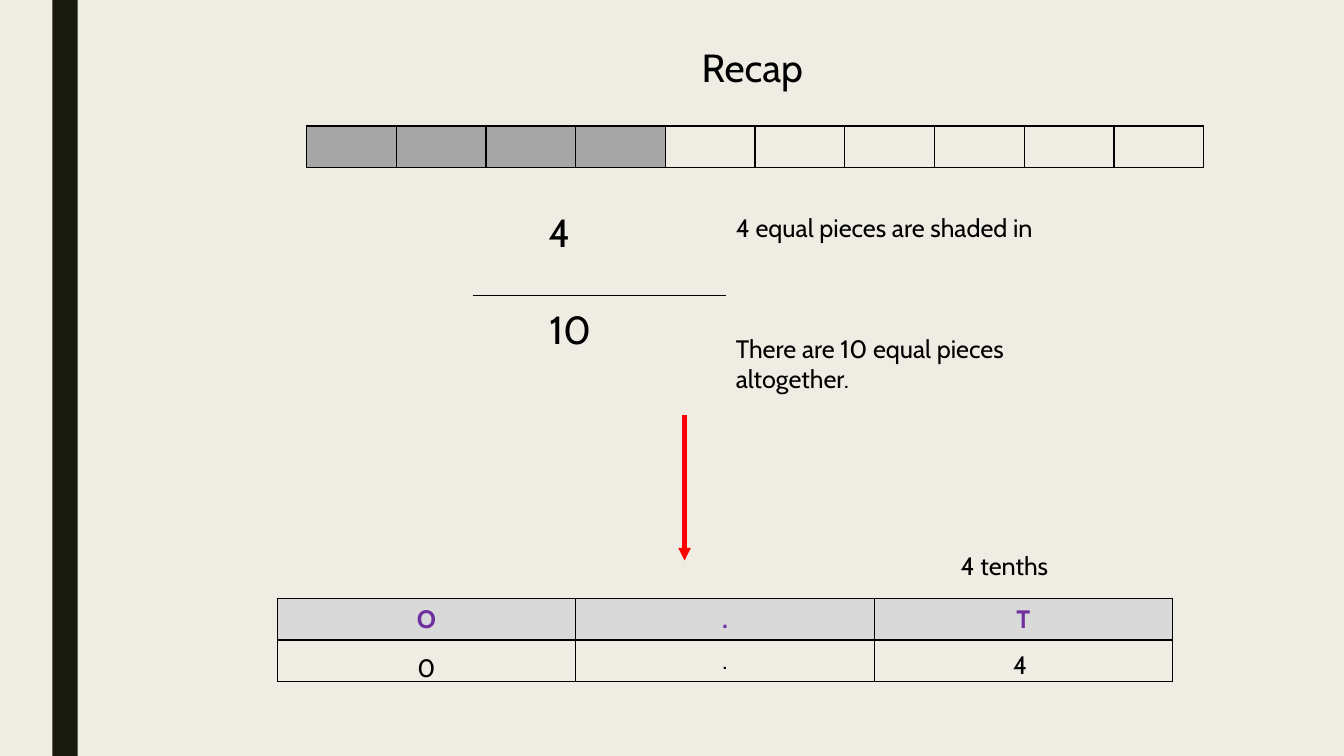
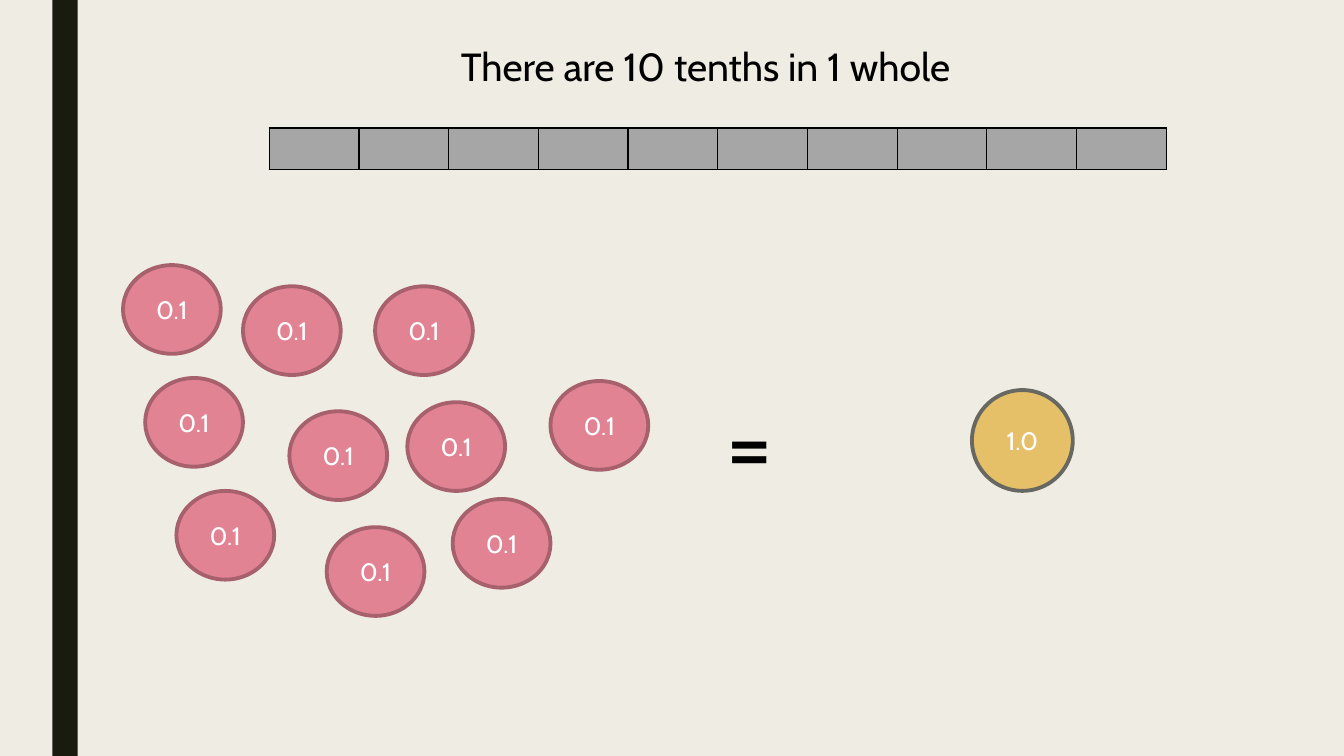
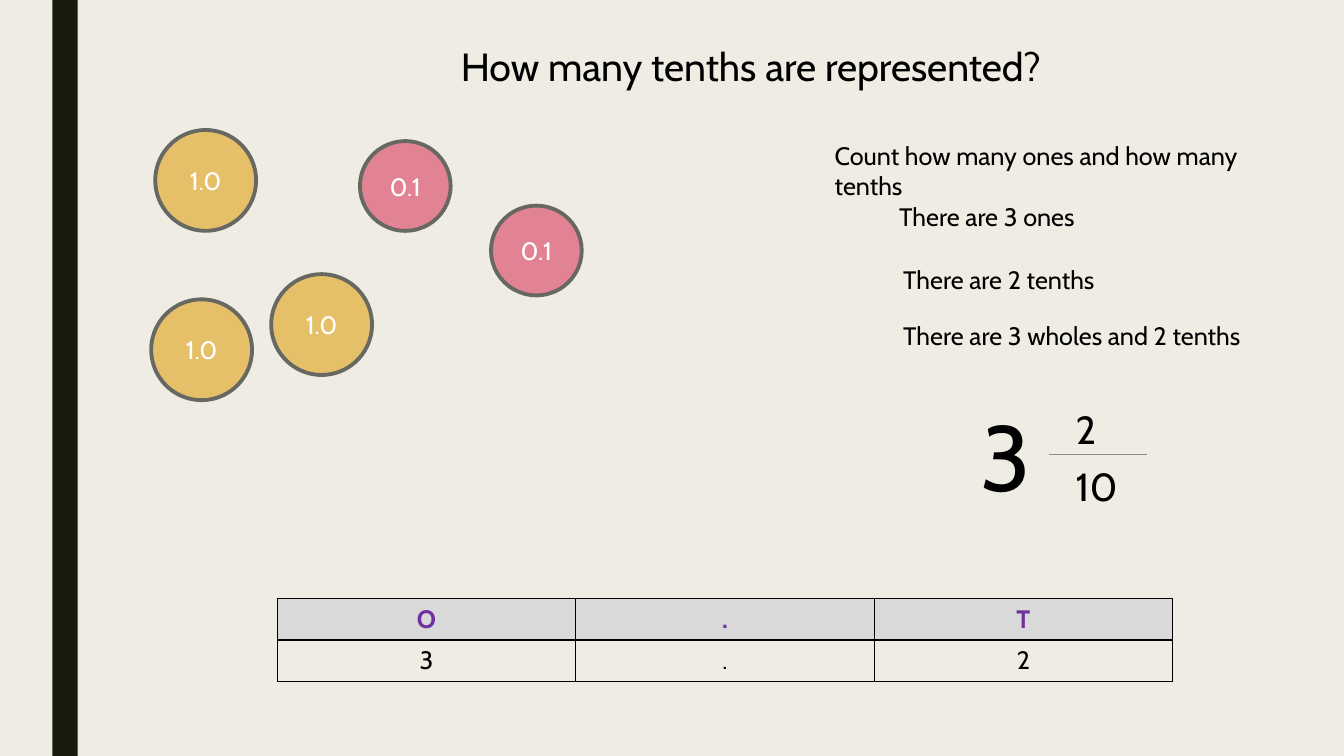
"""Build three maths slides that introduce tenths with bars, counters and place value tables."""
import dataclasses

import lxml.etree
import pptx
import pptx.dml.color
import pptx.enum.shapes
import pptx.enum.text
import pptx.oxml.ns
import pptx.util

PX = 9144


@dataclasses.dataclass(frozen=True)
class Theme:
    font: str = "Cabin"
    body: int = 18
    heading: int = 28
    giant: int = 66
    paper: str = "EFEDE3"
    band: str = "191B0E"
    ink: str = "000000"
    white: str = "FFFFFF"
    shaded: str = "A6A6A6"
    header: str = "D9D9D9"
    purple: str = "7030A0"
    red: str = "FF0000"
    rule: str = "8C8D86"
    pink: str = "E28394"
    pink_edge: str = "A7616D"
    gold: str = "E6C069"
    gray_edge: str = "686863"


THEME = Theme()


def color(value):
    return pptx.dml.color.RGBColor.from_string(value)


def write(text_frame, text, size, text_color, centered=False, bold=False):
    text_frame.text = text
    paragraph = text_frame.paragraphs[0]
    align = pptx.enum.text.PP_ALIGN
    paragraph.alignment = align.CENTER if centered else align.LEFT
    paragraph.font.name = THEME.font
    paragraph.font.size = pptx.util.Pt(size)
    paragraph.font.bold = bold
    paragraph.font.color.rgb = color(text_color)


presentation = pptx.Presentation()
presentation.slide_width = 1333 * PX
presentation.slide_height = 750 * PX
master = presentation.slide_master
master.background.fill.solid()
master.background.fill.fore_color.rgb = color(THEME.paper)

slides = []
for text, left, top, width in [
    ("Recap", 686, 38, 124),
    ("There are 10 tenths in 1 whole", 447, 37, 527),
    ("How many tenths are represented?", 447, 37, 610),
]:
    slide = presentation.slides.add_slide(presentation.slide_layouts.get_by_name("Title Only"))
    title = slide.shapes.title
    title.left, title.top, title.width, title.height = left * PX, top * PX, width * PX, 57 * PX
    title.text_frame.word_wrap = False
    title.text_frame.auto_size = pptx.enum.text.MSO_AUTO_SIZE.SHAPE_TO_FIT_TEXT
    title.text_frame.vertical_anchor = pptx.enum.text.MSO_ANCHOR.TOP
    write(title.text_frame, text, THEME.heading, THEME.ink)
    slides.append(slide)
recap, whole, represented = slides

band = recap.shapes.add_shape(
    pptx.enum.shapes.MSO_SHAPE.RECTANGLE, 52 * PX, 0, 25 * PX, 750 * PX)
band.shadow.inherit = False
band.fill.solid()
band.fill.fore_color.rgb = color(THEME.band)
band.line.fill.background()
band.element.nvSpPr.cNvPr.id = 99
master.shapes.element.insert(2, band.element)

bar_width, place_width, row_height = 89, 296, 41
place_header = [(letter, THEME.header) for letter in "O.T"]
for slide, left, top, column_width, rows in [
    (recap, 304, 125, bar_width, [[("", THEME.shaded)] * 4 + [("", None)] * 6]),
    (whole, 267, 127, bar_width, [[("", THEME.shaded)] * 10]),
    (recap, 275, 594, place_width, [place_header, [("", None), (".", None), ("", None)]]),
    (represented, 275, 594, place_width, [place_header, [(digit, None) for digit in "3.2"]]),
]:
    table = slide.shapes.add_table(
        len(rows), len(rows[0]), left * PX, top * PX,
        len(rows[0]) * column_width * PX, len(rows) * row_height * PX).table
    table.first_row = table.horz_banding = False
    for row_index, row in enumerate(rows):
        for column_index, (text, fill) in enumerate(row):
            cell = table.cell(row_index, column_index)
            cell.vertical_anchor = pptx.enum.text.MSO_ANCHOR.MIDDLE
            if fill:
                cell.fill.solid()
                cell.fill.fore_color.rgb = color(fill)
            else:
                cell.fill.background()
            if text:
                write(cell.text_frame, text, THEME.body, THEME.purple if fill else THEME.ink,
                      centered=True, bold=bool(fill))
            properties = cell._tc.get_or_add_tcPr()
            for position, side in enumerate(["lnL", "lnR", "lnT", "lnB"]):
                border = lxml.etree.Element(
                    pptx.oxml.ns.qn("a:" + side), w=str(pptx.util.Pt(1)))
                border_fill = lxml.etree.SubElement(border, pptx.oxml.ns.qn("a:solidFill"))
                lxml.etree.SubElement(
                    border_fill, pptx.oxml.ns.qn("a:srgbClr"), val=THEME.ink)
                properties.insert(position, border)

for slide, text, left, top, width, height, size in [
    (recap, "4", 534, 202, 58, 57, THEME.heading),
    (recap, "10", 535, 298, 87, 57, THEME.heading),
    (recap, "4 equal pieces are shaded in", 720, 206, 316, 71, THEME.body),
    (recap, "There are 10 equal pieces altogether.", 720, 326, 316, 71, THEME.body),
    (recap, "4 tenths", 943, 541, 160, 40, THEME.body),
    (recap, "0", 404, 642, 132, 40, THEME.body),
    (recap, "4", 995, 639, 132, 40, THEME.body),
    (whole, "=", 711, 378, 75, 121, THEME.giant),
    (represented, "Count how many ones and how many tenths", 818, 134, 470, 71, THEME.body),
    (represented, "There are 3 ones", 882, 195, 201, 40, THEME.body),
    (represented, "There are 2 tenths", 886, 257, 223, 40, THEME.body),
    (represented, "There are 3 wholes and 2 tenths", 886, 313, 371, 40, THEME.body),
    (represented, "3", 963, 391, 75, 121, THEME.giant),
    (represented, "2", 1057, 397, 43, 57, THEME.heading),
    (represented, "10", 1057, 454, 65, 57, THEME.heading),
]:
    text_box = slide.shapes.add_textbox(left * PX, top * PX, width * PX, height * PX)
    text_box.text_frame.word_wrap = True
    write(text_box.text_frame, text, size, THEME.ink)

for slide, start_x, start_y, end_x, end_y, line_color, weight, arrow in [
    (recap, 469, 293, 720, 293, THEME.ink, 0.5, False),
    (recap, 679, 412, 679, 556, THEME.red, 3, True),
    (represented, 1040, 451, 1138, 451, THEME.rule, 0.5, False),
]:
    connector = slide.shapes.add_connector(
        pptx.enum.shapes.MSO_CONNECTOR.STRAIGHT,
        start_x * PX, start_y * PX, end_x * PX, end_y * PX)
    connector.line.color.rgb = color(line_color)
    connector.line.width = pptx.util.Pt(weight)
    if arrow:
        lxml.etree.SubElement(
            connector.line._get_or_add_ln(), pptx.oxml.ns.qn("a:tailEnd"), type="triangle")
    lxml.etree.SubElement(connector.element.spPr, pptx.oxml.ns.qn("a:effectLst"))

for slide, text, fill, edge, width, height, places in [
    (whole, "0.1", THEME.pink, THEME.pink_edge, 97, 88, [
        (122, 263), (144, 375), (241, 284), (287, 408), (175, 487),
        (372, 284), (324, 523), (404, 399), (449, 495), (546, 378)]),
    (whole, "1.0", THEME.gold, THEME.gray_edge, 100, 100, [(964, 387)]),
    (represented, "0.1", THEME.pink, THEME.gray_edge, 90, 89, [(357, 140), (487, 204)]),
    (represented, "1.0", THEME.gold, THEME.gray_edge, 100, 100, [
        (154, 129), (269, 272), (150, 297)]),
]:
    for left, top in places:
        counter = slide.shapes.add_shape(
            pptx.enum.shapes.MSO_SHAPE.OVAL, left * PX, top * PX, width * PX, height * PX)
        counter.shadow.inherit = False
        counter.fill.solid()
        counter.fill.fore_color.rgb = color(fill)
        counter.line.color.rgb = color(edge)
        counter.line.width = pptx.util.Pt(2.75)
        counter.text_frame.vertical_anchor = pptx.enum.text.MSO_ANCHOR.MIDDLE
        write(counter.text_frame, text, THEME.body, THEME.white, centered=True)

presentation.save("out.pptx")
